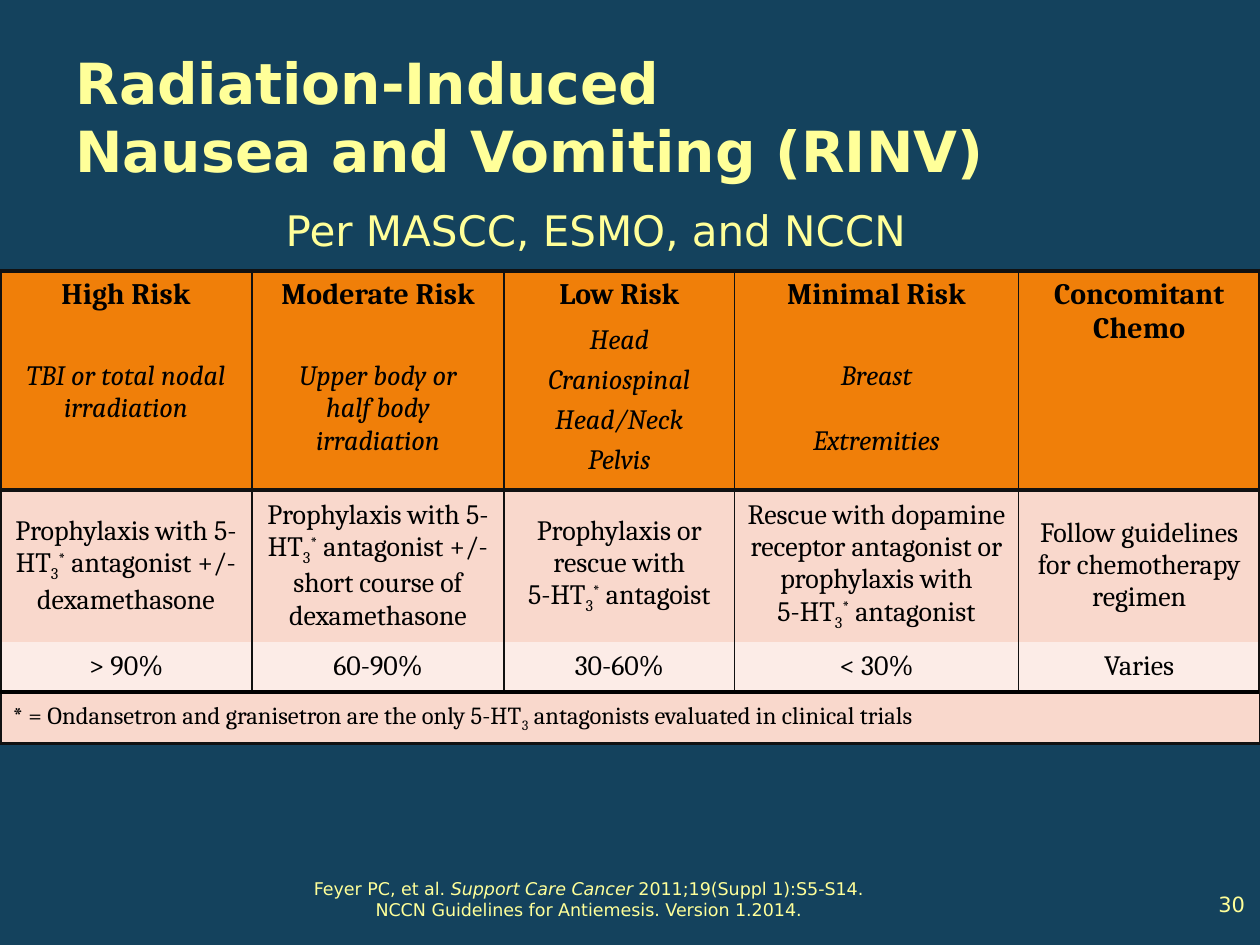
from dataclasses import dataclass

from lxml.etree import SubElement as Sub
from pptx import Presentation as Deck
from pptx.dml.color import RGBColor as Rgb
from pptx.enum.text import MSO_ANCHOR as Anchor, PP_ALIGN as Align
from pptx.oxml.ns import qn
from pptx.util import Cm, Pt


@dataclass(frozen=True)
class Theme:
    back: str = "14425D"
    light: str = "FFFF99"
    ink: str = "000000"
    edge: str = "111111"
    head: str = "F07F09"
    band: str = "F9D8CC"
    pale: str = "FCECE7"
    sans: str = "DejaVu Sans"
    serif: str = "Cambria"
    title: float = 32.4
    sub: float = 24
    risk: float = 17
    body: float = 16
    note: float = 14
    page: float = 12
    cite: float = 10
    thin: float = 1
    thick: float = 2.25


class Slide:
    def __init__(self, deck, theme):
        self.theme = theme
        self.page = deck.slides.add_slide(deck.slide_layouts[6])
        fill = self.page.background.fill
        fill.solid()
        fill.fore_color.rgb = Rgb.from_string(theme.back)

    def span(self, para, text, color, base=0, **form):
        for i, line in enumerate(text.split("\n")):
            if i:
                para.add_line_break()
            run = para.add_run()
            run.text = line
            for key, val in form.items():
                setattr(run.font, key, val)
            run.font.color.rgb = Rgb.from_string(color)
            if base:
                run._r.get_or_add_rPr().set("baseline", str(base * 1000))

    def flow(self, frame, paras, align, **form):
        """Each paragraph is (space before, [(text, format), ...])."""
        for i, (gap, runs) in enumerate(paras):
            para = frame.add_paragraph() if i else frame.paragraphs[0]
            para.alignment = align
            para.space_before = Pt(gap)
            for text, extra in runs:
                self.span(para, text, **{**form, **extra})

    def text(self, box, paras, size, align=Align.LEFT, anchor=Anchor.TOP,
             foot=0.13, **form):
        frame = self.page.shapes.add_textbox(*map(Cm, box)).text_frame
        for key, val in dict(word_wrap=True, vertical_anchor=anchor,
                             margin_bottom=Cm(foot)).items():
            setattr(frame, key, val)
        self.flow(frame, paras, align, name=self.theme.sans,
                  color=self.theme.light, size=Pt(size), **form)

    def grid(self, left, top, cols, rows):
        table = self.page.shapes.add_table(
            len(rows), len(cols), Cm(left), Cm(top),
            Cm(sum(cols)), Cm(sum(rows))).table
        table.first_row = table.horz_banding = False
        for parts, key, sizes in ((table.columns, "width", cols),
                                  (table.rows, "height", rows)):
            for part, size in zip(parts, sizes):
                setattr(part, key, Cm(size))
        return table

    def cell(self, cell, fill, lines):
        prop = cell._tc.get_or_add_tcPr()
        for side, (width, color) in zip("LRTB", lines):
            line = Sub(prop, qn("a:ln" + side), w=str(int(Pt(width))))
            if width:
                paint = Sub(line, qn("a:solidFill"))
                Sub(paint, qn("a:srgbClr"), val=color)
            else:
                Sub(line, qn("a:noFill"))
        cell.fill.solid()
        cell.fill.fore_color.rgb = Rgb.from_string(fill)

    def fill(self, cell, paras, size, align=Align.CENTER,
             anchor=Anchor.MIDDLE):
        cell.vertical_anchor = anchor
        self.flow(cell.text_frame, paras, align, name=self.theme.serif,
                  color=self.theme.ink, size=Pt(size))


def para(text, gap=0, **form):
    return gap, [(text, form)]


def drug(lead, tail):
    return 0, [(lead + "5-HT", {}), ("3", {"base": -25}),
               ("*", {"base": 30}), (" " + tail, {})]


# Table content: risk, sites with the gap above each, treatment, rate
RISKS = [
    ("High Risk", [("TBI or total nodal irradiation", 28)],
     [drug("Prophylaxis with ", "antagonist +/- dexamethasone")], "> 90%"),
    ("Moderate Risk", [("Upper body or", 28), ("half body irradiation", 0)],
     [drug("Prophylaxis with ",
           "antagonist +/- short course of dexamethasone")], "60-90%"),
    ("Low Risk", [("Head", 7), ("Craniospinal", 4.6), ("Head/Neck", 4.6),
                  ("Pelvis", 4.6)],
     [para("Prophylaxis or rescue with"), drug("", "antagoist")], "30-60%"),
    ("Minimal Risk", [("Breast", 28), ("Extremities", 18.5)],
     [para("Rescue with dopamine receptor antagonist or prophylaxis with"),
      drug("", "antagonist")], "< 30%"),
    ("Concomitant Chemo", [],
     [para("Follow guidelines for chemotherapy regimen")], "Varies"),
]
NOTE = [(0, [("* = Ondansetron and granisetron are the only 5-HT", {}),
             ("3", {"base": -25}),
             (" antagonists evaluated in clinical trials", {})])]


def main():
    look = Theme()
    deck = Deck()
    deck.slide_width, deck.slide_height = Cm(25.4), Cm(19.05)
    slide = Slide(deck, look)

    # Title and subtitle
    slide.text((1.27, 0.84, 22.73, 2.92),
               [para("Radiation-Induced\nNausea and Vomiting (RINV)")],
               look.title, anchor=Anchor.BOTTOM, foot=0.06, bold=True)
    slide.text((5.51, 3.99, 14.17, 0.84),
               [para("Per MASCC, ESMO, and NCCN")], look.sub)

    # Risk table: fills and borders
    table = slide.grid(0, 5.46, [5.08, 5.08, 4.65, 5.72, 4.87],
                       [4.29, 2.94, 1.02, 1.04])
    thick, thin = (look.thick, look.edge), (look.thin, look.edge)
    none, dark = (0, look.ink), (look.thick, look.ink)
    rules = [thick, thick, none, dark, thick]
    last = len(RISKS) - 1
    for r, color in enumerate([look.head, look.band, look.pale, look.band]):
        for c in range(last + 1):
            slide.cell(table.cell(r, c), color,
                       [thin if c else thick, thin if c < last else thick,
                        rules[r], rules[r + 1]])

    # Risk table: text
    for c, (risk, sites, care, rate) in enumerate(RISKS):
        head = [para(risk, bold=True, size=Pt(look.risk))]
        head += [para(site, gap, italic=True) for site, gap in sites]
        slide.fill(table.cell(0, c), head, look.body, anchor=Anchor.TOP)
        slide.fill(table.cell(1, c), care, look.body)
        slide.fill(table.cell(2, c), [para(rate)], look.body)
    foot = table.cell(3, 0)
    foot.merge(table.cell(3, last))
    slide.fill(foot, NOTE, look.note, Align.LEFT)

    # Page number and citation
    slide.text((23.83, 17.53, 1.52, 1.09), [para("30")], look.page,
               Align.RIGHT, Anchor.BOTTOM)
    slide.text((3.61, 17.58, 16.51, 1.12),
               [(0, [("Feyer PC, et al. ", {}),
                     ("Support Care Cancer ", {"italic": True}),
                     ("2011;19(Suppl 1):S5-S14.", {})]),
                para("NCCN Guidelines for Antiemesis. Version 1.2014.")],
               look.cite, Align.CENTER)

    deck.save("out.pptx")


if __name__ == "__main__":
    main()
